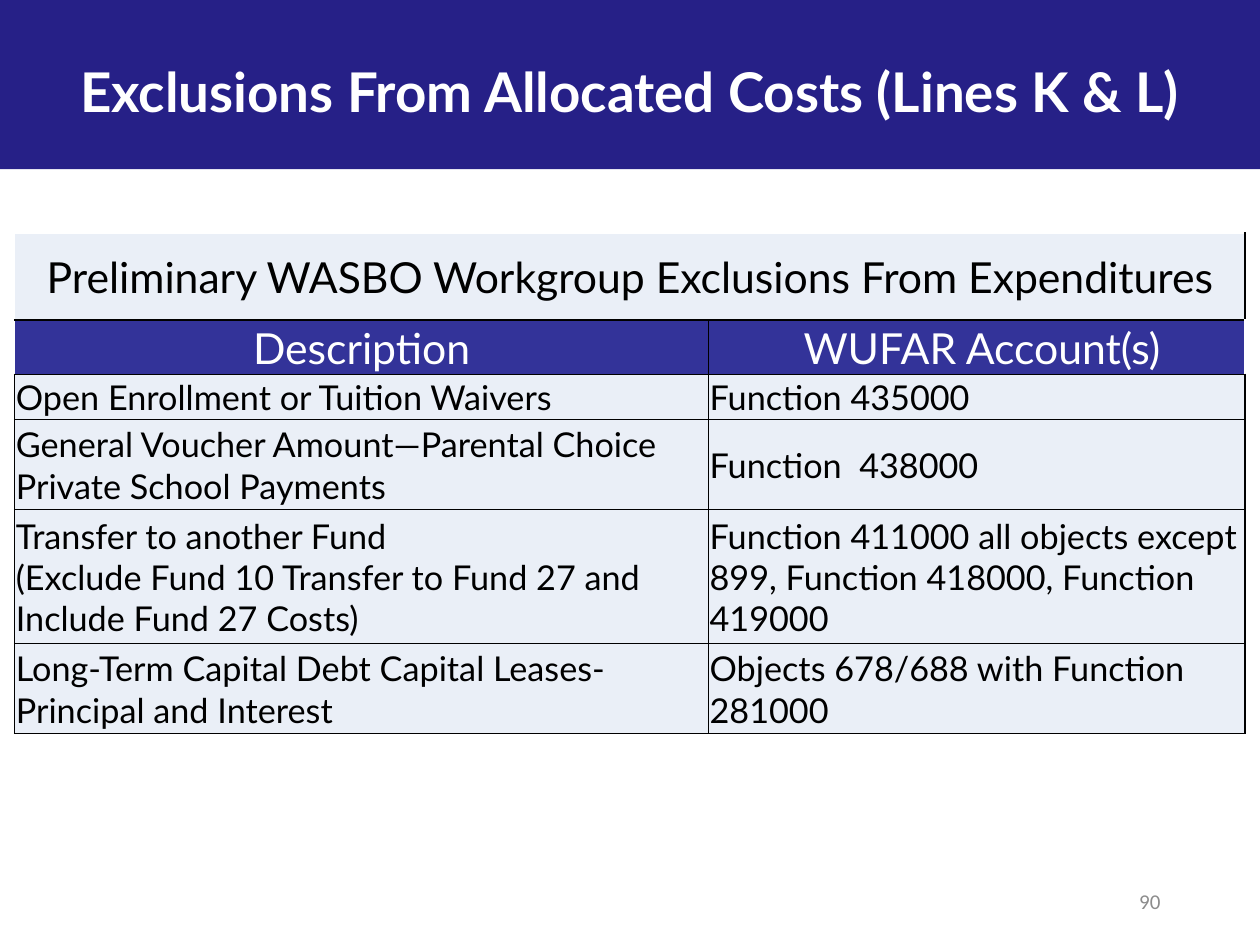
from lxml import etree
from pptx import Presentation
from pptx.dml.color import RGBColor
from pptx.enum import shapes, text
from pptx.oxml import ns
from pptx.util import Pt

NAVY = RGBColor(0x26, 0x20, 0x87)
INDIGO = RGBColor(0x33, 0x33, 0x99)
PALE = RGBColor(0xEA, 0xEF, 0xF7)
WHITE = RGBColor(0xFF, 0xFF, 0xFF)
BLACK = RGBColor(0, 0, 0)
GREY = RGBColor(0x8C, 0x8C, 0x8C)

COLUMN_WIDTHS = [406, 314]
ROW_HEIGHTS = [51, 31.7, 26.6, 52.6, 78.5, 52.6]
ROWS = [
    ("Preliminary WASBO Workgroup Exclusions From Expenditures", ""),
    ("Description", " WUFAR Account(s)"),
    ("Open Enrollment or Tuition Waivers", "Function 435000"),
    ("General Voucher Amount—Parental Choice Private School Payments",
     "Function  438000"),
    ("Transfer to another Fund\n(Exclude Fund 10 Transfer to Fund 27 and\n"
     "Include Fund 27 Costs)",
     "Function 411000 all objects except 899, Function 418000, Function 419000"),
    ("Long-Term Capital Debt Capital Leases- Principal and Interest",
     "Objects 678/688 with Function 281000"),
]


def style_text(frame, font, size, color, align, bold=False):
    for para in frame.paragraphs:
        para.alignment = align
        for span in para.runs:
            span.font.name = font
            span.font.size = Pt(size)
            span.font.color.rgb = color
            span.font.bold = bold


def set_borders(cell, left, right, top, bottom):
    """Draw the four cell edges one point wide in the given colours."""
    properties = cell._tc.get_or_add_tcPr()
    for side, color in zip("LRTB", (left, right, top, bottom)):
        line = etree.SubElement(properties, ns.qn(f"a:ln{side}"), w=str(Pt(1)))
        fill = etree.SubElement(line, ns.qn("a:solidFill"))
        etree.SubElement(fill, ns.qn("a:srgbClr"), val=str(color))


deck = Presentation()
deck.slide_width = Pt(737.28)
deck.slide_height = Pt(552.96)
page = deck.slides.add_slide(deck.slide_layouts[5])

# Title over a full-width band
title = page.shapes.title
title.left, title.top, title.width, title.height = Pt(0), Pt(0), Pt(737.28), Pt(106.5)
title.text_frame.text = "Exclusions From Allocated Costs (Lines K & L)"
title.text_frame.auto_size = text.MSO_AUTO_SIZE.NONE
title.text_frame.vertical_anchor = text.MSO_ANCHOR.MIDDLE
style_text(title.text_frame, "Lato", 32, WHITE, text.PP_ALIGN.CENTER, bold=True)

band = page.shapes.add_shape(
    shapes.MSO_SHAPE.RECTANGLE, Pt(0), Pt(0), Pt(737.28), Pt(99))
band.shadow.inherit = False
band.fill.solid()
band.fill.fore_color.rgb = NAVY
band.line.fill.background()
title._element.addprevious(band._element)

# Table of exclusions
table = page.shapes.add_table(
    len(ROWS), len(COLUMN_WIDTHS), Pt(8.6), Pt(136.3),
    Pt(sum(COLUMN_WIDTHS)), Pt(sum(ROW_HEIGHTS))).table
table.first_row = False
table.horz_banding = False
for column, width in zip(table.columns, COLUMN_WIDTHS):
    column.width = Pt(width)
for row, height in zip(table.rows, ROW_HEIGHTS):
    row.height = Pt(height)
table.cell(0, 0).merge(table.cell(0, 1))

for r, row in enumerate(ROWS):
    heading = r < 2
    outer = WHITE if heading else BLACK
    for c, words in enumerate(row):
        cell = table.cell(r, c)
        cell.text_frame.text = words
        cell.vertical_anchor = text.MSO_ANCHOR.MIDDLE
        cell.margin_left = cell.margin_right = cell.margin_top = Pt(0.7)
        cell.margin_bottom = Pt(0)
        set_borders(cell,
                    left=outer if c == 0 else BLACK,
                    right=outer if c == 1 else BLACK,
                    top=WHITE if r == 0 else BLACK,
                    bottom=BLACK)
        cell.fill.solid()
        cell.fill.fore_color.rgb = INDIGO if r == 1 else PALE
        style_text(cell.text_frame, "Lato",
                   25 if heading else 20,
                   WHITE if r == 1 else BLACK,
                   text.PP_ALIGN.CENTER if heading else text.PP_ALIGN.LEFT)

# Page number
number = page.shapes.add_textbox(Pt(520.6), Pt(512.6), Pt(165.6), Pt(29.5))
number.text_frame.word_wrap = True
number.text_frame.vertical_anchor = text.MSO_ANCHOR.MIDDLE
number.text_frame.text = "90"
style_text(number.text_frame, "Calibri", 12.3, GREY, text.PP_ALIGN.RIGHT)

deck.save("out.pptx")
